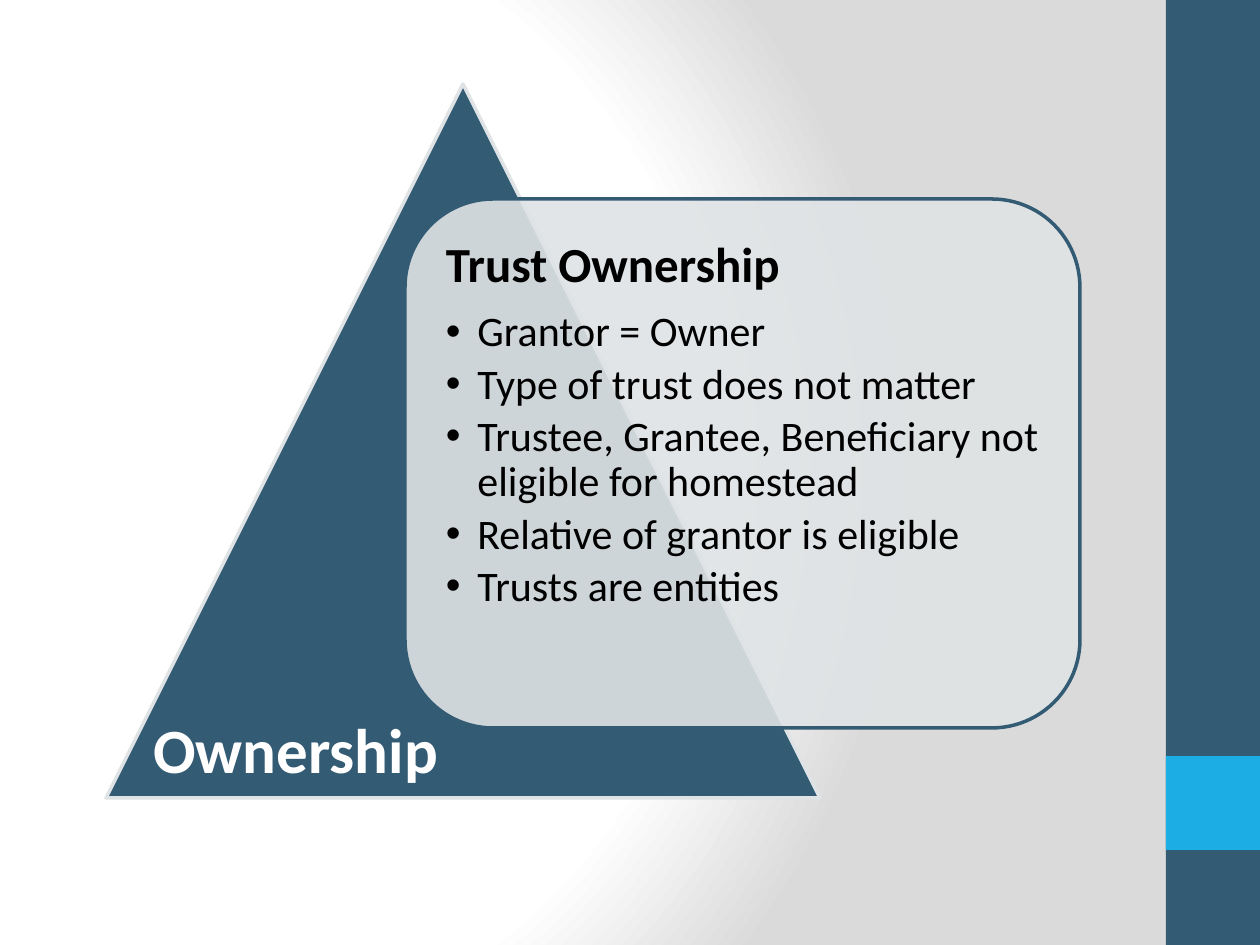
import dataclasses

import lxml.etree
import pptx
import pptx.dml.color
import pptx.enum.shapes
import pptx.oxml
import pptx.oxml.ns
import pptx.util


@dataclasses.dataclass(frozen=True)
class Theme:
    font: str = "Calibri"
    navy: str = "335B74"
    cyan: str = "1CADE4"
    mist: str = "DFE3E5"
    white: str = "FFFFFF"
    gray: str = "DADADA"
    black: str = "000000"
    label: int = 36
    heading: int = 28
    bullet: int = 24
    outline: int = 2


theme = Theme()
PX = 914400 / 126
SHAPE = pptx.enum.shapes.MSO_SHAPE
rgb = pptx.dml.color.RGBColor.from_string
qn = pptx.oxml.ns.qn


def add_block(kind, box, fill, line=None):
    block = slide.shapes.add_shape(kind, *(round(v * PX) for v in box))
    block.shadow.inherit = False
    block.fill.solid()
    block.fill.fore_color.rgb = rgb(fill)
    if line:
        block.line.color.rgb = rgb(line)
        block.line.width = pptx.util.Pt(theme.outline)
    else:
        block.line.fill.background()
    return block


def write(paragraph, text, size, color, bold=False, bullet=False, spacing=1.0, after=0):
    paragraph.text = text
    paragraph.line_spacing = spacing
    paragraph.space_after = pptx.util.Pt(after)
    if bullet:
        paragraph.level = 1
        properties = paragraph._p.get_or_add_pPr()
        indent = pptx.util.Inches(0.25)
        properties.set("marL", str(indent))
        properties.set("indent", str(-indent))
        lxml.etree.SubElement(properties, qn("a:buFont")).set("typeface", "Arial")
        lxml.etree.SubElement(properties, qn("a:buChar")).set("char", "•")
    font = paragraph.font
    font.name = theme.font
    font.size = pptx.util.Pt(size)
    font.bold = bold
    font.color.rgb = rgb(color)


deck = pptx.Presentation()
deck.slide_width = round(1260 * PX)
deck.slide_height = round(945 * PX)
slide = deck.slides.add_slide(deck.slide_layouts[6])

slide.background.fill.solid()
solid = slide.element.find(".//" + qn("p:bgPr") + "/" + qn("a:solidFill"))
stops = "".join(
    f'<a:gs pos="{percent * 1000}"><a:srgbClr val="{color}"/></a:gs>'
    for percent, color in [(0, theme.white), (75, theme.white), (100, theme.gray)]
)
glow = pptx.oxml.parse_xml(
    f'<a:gradFill {pptx.oxml.ns.nsdecls("a")} rotWithShape="1"><a:gsLst>{stops}</a:gsLst>'
    '<a:path path="circle"><a:fillToRect l="20000" t="50000" r="100000" b="50000"/></a:path>'
    "</a:gradFill>"
)
solid.getparent().replace(solid, glow)

add_block(SHAPE.RECTANGLE, (1166, 0, 94, 945), theme.navy)
add_block(SHAPE.RECTANGLE, (1166, 756, 94, 94), theme.cyan)
add_block(SHAPE.ISOSCELES_TRIANGLE, (106, 84, 714, 714), theme.navy, theme.mist)
card = add_block(SHAPE.ROUNDED_RECTANGLE, (405, 199, 675, 529), theme.mist, theme.navy)
card_color = card.fill._xPr.find(qn("a:solidFill"))[0]
lxml.etree.SubElement(card_color, qn("a:alpha")).set("val", "90000")

trust = slide.shapes.add_textbox(*(round(v * PX) for v in (431, 225, 624, 478))).text_frame
trust.word_wrap = True
trust.margin_left = trust.margin_right = round(15 * PX)
trust.margin_top = trust.margin_bottom = round(15 * PX)
write(trust.paragraphs[0], "Trust Ownership", theme.heading, theme.black,
      bold=True, spacing=0.9, after=10)
for point in [
    "Grantor = Owner",
    "Type of trust does not matter",
    "Trustee, Grantee, Beneficiary not eligible for homestead",
    "Relative of grantor is eligible",
    "Trusts are entities",
]:
    write(trust.add_paragraph(), point, theme.bullet, theme.black,
          bullet=True, spacing=0.9, after=4)

ownership = slide.shapes.add_textbox(*(round(v * PX) for v in (141, 704, 388, 89))).text_frame
ownership.word_wrap = True
write(ownership.paragraphs[0], "Ownership", theme.label, theme.white, bold=True)

deck.save("out.pptx")
